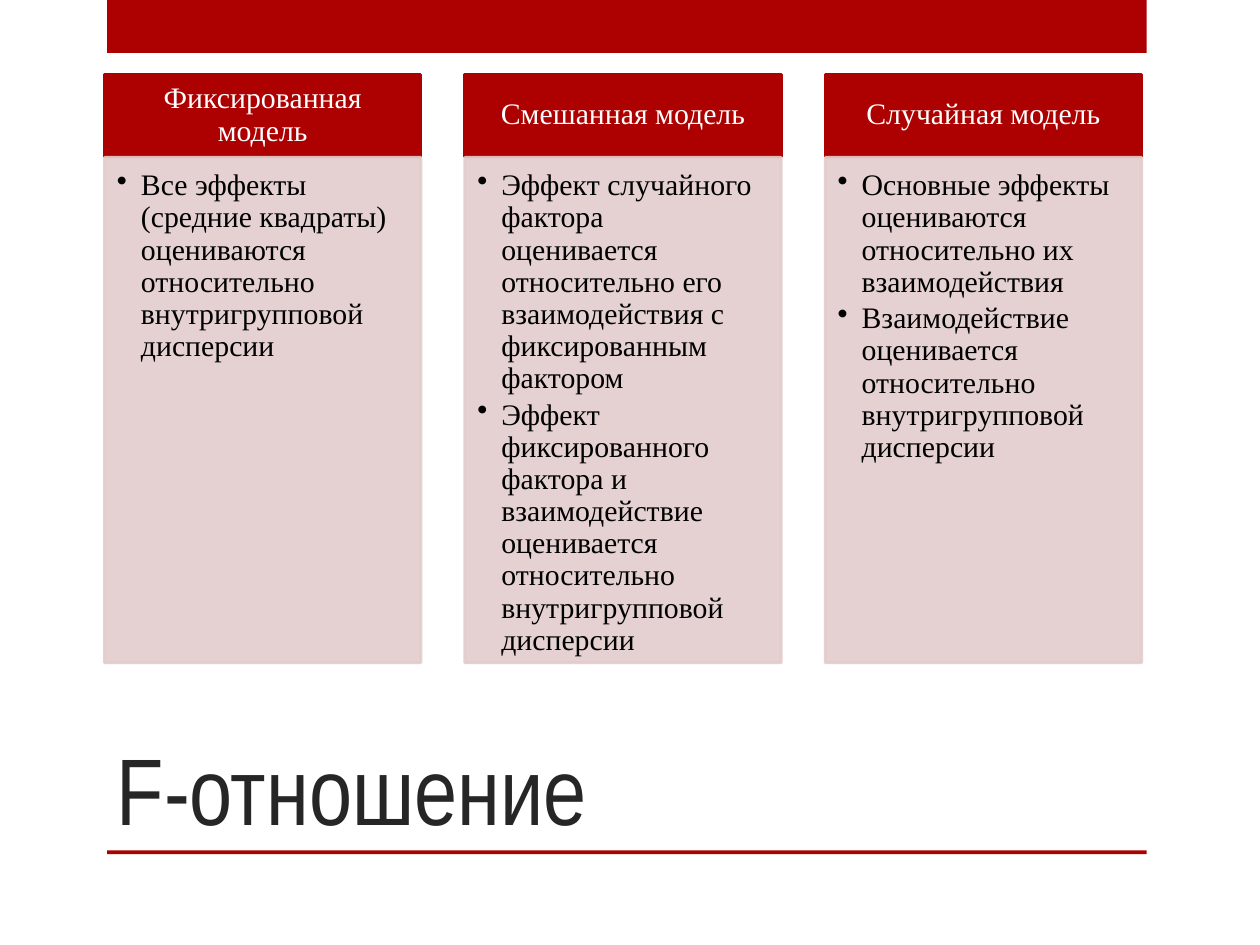
from lxml import etree
from pptx import Presentation
from pptx.dml.color import RGBColor
from pptx.enum import shapes, text
from pptx.oxml import ns
from pptx.util import Inches, Pt

RED = RGBColor(0xAD, 0x01, 0x01)
PINK = RGBColor(0xE3, 0xCC, 0xCC)
WHITE = RGBColor(0xFF, 0xFF, 0xFF)
BLACK = RGBColor(0, 0, 0)
DARK = RGBColor(0x26, 0x26, 0x26)

LEFT, STEP, WIDTH = 0.83, 2.86, 2.51
MODELS = [
    ("Фиксированная модель", [
        "Все эффекты (средние квадраты) оцениваются относительно "
        "внутригрупповой дисперсии"]),
    ("Смешанная модель", [
        "Эффект случайного фактора оценивается относительно его "
        "взаимодействия с фиксированным фактором",
        "Эффект фиксированного фактора и взаимодействие оценивается "
        "относительно внутригрупповой дисперсии"]),
    ("Случайная модель", [
        "Основные эффекты оцениваются относительно их взаимодействия",
        "Взаимодействие оценивается относительно внутригрупповой "
        "дисперсии"]),
]


def fade(props, share):
    """Make every solid colour below the element partly opaque."""
    for color in props.iter(ns.qn("a:srgbClr")):
        etree.SubElement(color, ns.qn("a:alpha"), val=str(share * 1000))


class Deck:
    """Holds the style and the current slide."""
    font, size = "Times New Roman", 17

    def __init__(self):
        self.prs = Presentation()
        self.prs.slide_width, self.prs.slide_height = Inches(10), Inches(7.5)
        self.slide = self.prs.slides.add_slide(self.prs.slide_layouts[6])

    def rect(self, x, y, w, h, color, edge=False):
        box = self.slide.shapes.add_shape(
            shapes.MSO_SHAPE.RECTANGLE,
            Inches(x), Inches(y), Inches(w), Inches(h))
        box.shadow.inherit = False
        box.fill.solid()
        box.fill.fore_color.rgb = color
        if edge:
            box.line.color.rgb = color
            box.line.width = Pt(1.75)
        else:
            box.line.fill.background()
        return box

    def label(self, box, lines, color, anchor, inset, align, after):
        """Fill a box with styled paragraphs; inset is left, top, right, bottom."""
        frame = box.text_frame
        frame.word_wrap = True
        frame.vertical_anchor = anchor
        (frame.margin_left, frame.margin_top,
         frame.margin_right, frame.margin_bottom) = map(Inches, inset)
        frame.text = "\n".join(lines)
        for par in frame.paragraphs:
            par.alignment = align
            par.line_spacing = 0.9
            par.space_after = Pt(after)
            self.style(par, self.font, self.size, color)

    def style(self, par, name, size, color):
        for run in par.runs:
            run.font.name = name
            run.font.size = Pt(size)
            run.font.color.rgb = color

    def head(self, x, name):
        box = self.rect(x, 0.59, WIDTH, 0.65, RED, edge=True)
        self.label(box, [name], WHITE, text.MSO_ANCHOR.MIDDLE,
                   (0.13, 0.08, 0.13, 0.08), text.PP_ALIGN.CENTER, 6)

    def body(self, x, lines):
        box = self.rect(x, 1.25, WIDTH, 4.01, PINK, edge=True)
        fade(box.element.spPr, 90)
        self.label(box, lines, BLACK, text.MSO_ANCHOR.TOP,
                   (0.1, 0.1, 0.13, 0.15), text.PP_ALIGN.LEFT, 2.5)
        for par in box.text_frame.paragraphs:
            par.level = 1
            self.bullet(par)

    def bullet(self, par):
        props = par._p.get_or_add_pPr()
        props.set("marL", str(Inches(0.19)))
        props.set("indent", str(Inches(-0.19)))
        etree.SubElement(props, ns.qn("a:buChar"), char="•")

    def title(self, name):
        box = self.slide.shapes.add_textbox(
            Inches(LEFT), Inches(5), Inches(7.42), Inches(1.75))
        frame = box.text_frame
        frame.word_wrap = True
        frame.vertical_anchor = text.MSO_ANCHOR.BOTTOM
        frame.text = name
        self.style(frame.paragraphs[0], "Arial Narrow", 54, DARK)


def main():
    deck = Deck()
    for top, high in ((0, 0.42), (6.75, 0.03)):
        deck.rect(0.85, top, 8.25, high, RED)
    deck.title("F-отношение")
    for i, (name, lines) in enumerate(MODELS):
        x = LEFT + i * STEP
        deck.head(x, name)
        deck.body(x, lines)
    deck.prs.save("out.pptx")


if __name__ == "__main__":
    main()
